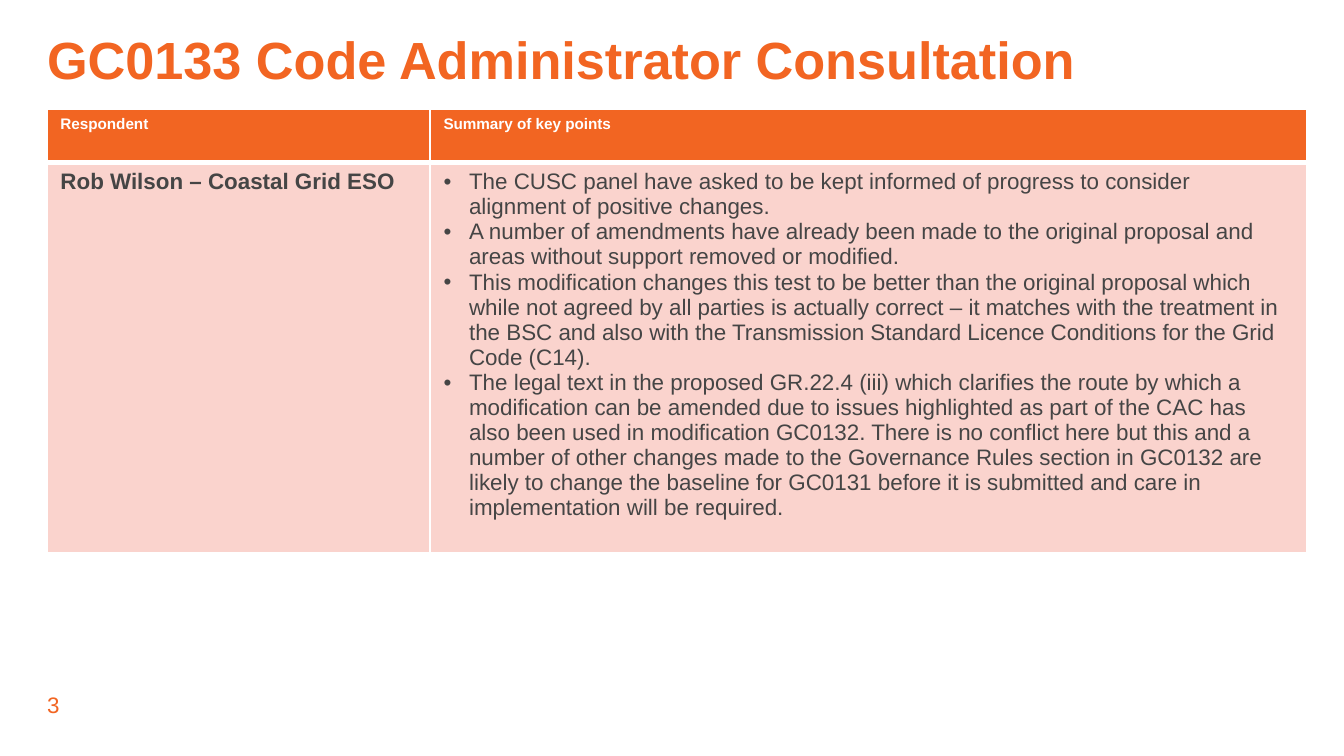
from lxml.etree import SubElement
from pptx import Presentation
from pptx.dml.color import RGBColor
from pptx.oxml.ns import qn
from pptx.util import Inches, Pt

ORANGE = RGBColor(0xF2, 0x65, 0x22)
PINK = RGBColor(0xFA, 0xD3, 0xCD)
GREY = RGBColor(0x45, 0x45, 0x45)
WHITE = RGBColor(0xFF, 0xFF, 0xFF)
FONT = "Arial"
LEFT = 0.35
COLS = (2.85, 6.52)
ROWS = (0.4, 2.52)
HEADERS = ("Respondent", "Summary of key points")
RESPONDENT = "Rob Wilson – Coastal Grid ESO"
KEY_POINTS = (
    "The CUSC panel have asked to be kept informed of progress to consider "
    "alignment of positive changes.",
    "A number of amendments have already been made to the original proposal "
    "and areas without support removed or modified.",
    "This modification changes this test to be better than the original "
    "proposal which while not agreed by all parties is actually correct – it "
    "matches with the treatment in the BSC and also with the Transmission "
    "Standard Licence Conditions for the Grid Code (C14).",
    "The legal text in the proposed GR.22.4 (iii) which clarifies the route by "
    "which a modification can be amended due to issues highlighted as part of "
    "the CAC has also been used in modification GC0132. There is no conflict "
    "here but this and a number of other changes made to the Governance Rules "
    "section in GC0132 are likely to change the baseline for GC0131 before it "
    "is submitted and care in implementation will be required.",
)


def style(p, size, color, bold=False):
    """Format every run of a paragraph."""
    for r in p.runs:
        r.font.name, r.font.size, r.font.bold = FONT, Pt(size), bold
        r.font.color.rgb = color


def add_text(s, box, text, size, bold=False):
    """Add an orange text box without insets and return its paragraph."""
    tf = s.shapes.add_textbox(*map(Inches, box)).text_frame
    tf.word_wrap = True
    tf.margin_left = tf.margin_right = tf.margin_top = tf.margin_bottom = 0
    tf.text = text
    style(tf.paragraphs[0], size, ORANGE, bold)
    return tf.paragraphs[0]


def add_bullet(p):
    """Give a paragraph a hanging round bullet."""
    pPr = p._p.get_or_add_pPr()
    pPr.set("marL", str(Inches(0.19)))
    pPr.set("indent", str(-Inches(0.19)))
    SubElement(pPr, qn("a:buFont"), typeface=FONT)
    SubElement(pPr, qn("a:buChar"), char="•")


def set_borders(cell, **widths):
    """Draw white cell borders, given by side in points."""
    tcPr = cell._tc.get_or_add_tcPr()
    for side, width in widths.items():
        ln = SubElement(tcPr, qn(f"a:ln{side}"), w=str(Pt(width)))
        fill = SubElement(ln, qn("a:solidFill"))
        SubElement(fill, qn("a:srgbClr"), val=str(WHITE))


def fill_cell(cell, lines, size, color, fill, bold=False, bullets=False):
    """Write the lines of a cell and colour it."""
    cell.fill.solid()
    cell.fill.fore_color.rgb = fill
    tf = cell.text_frame
    tf.text = "\n".join(lines)
    for p in tf.paragraphs:
        if bullets:
            add_bullet(p)
        style(p, size, color, bold)


def add_responses(s):
    """Add the table of respondents and their key points."""
    frame = s.shapes.add_table(len(ROWS), len(COLS), Inches(LEFT), Inches(0.81),
                               Inches(sum(COLS)), Inches(sum(ROWS)))
    table = frame.table
    for col, width in zip(table.columns, COLS):
        col.width = Inches(width)
    for row, height in zip(table.rows, ROWS):
        row.height = Inches(height)
    frame.height = Inches(3.3)
    for i, header in enumerate(HEADERS):
        set_borders(table.cell(0, i), L=1, R=1, T=1, B=3)
        set_borders(table.cell(1, i), L=1, R=1, T=3, B=1)
        fill_cell(table.cell(0, i), [header], 8.2, WHITE, ORANGE, bold=True)
    fill_cell(table.cell(1, 0), [RESPONDENT], 12, GREY, PINK, bold=True)
    fill_cell(table.cell(1, 1), KEY_POINTS, 12, GREY, PINK, bullets=True)


def main():
    """Build and save the slide."""
    prs = Presentation()
    prs.slide_width = Inches(10)
    prs.slide_height = prs.slide_width * 9 // 16
    s = prs.slides.add_slide(prs.slide_layouts[6])
    add_text(s, (LEFT, 5.14, 0.91, 0.2), "3", 12)
    title = add_text(s, (LEFT, 0.29, 9.29, 0.43),
                     "GC0133 Code Administrator Consultation", 28, bold=True)
    title.line_spacing = 0.8
    add_responses(s)
    prs.save("out.pptx")


if __name__ == "__main__":
    main()
